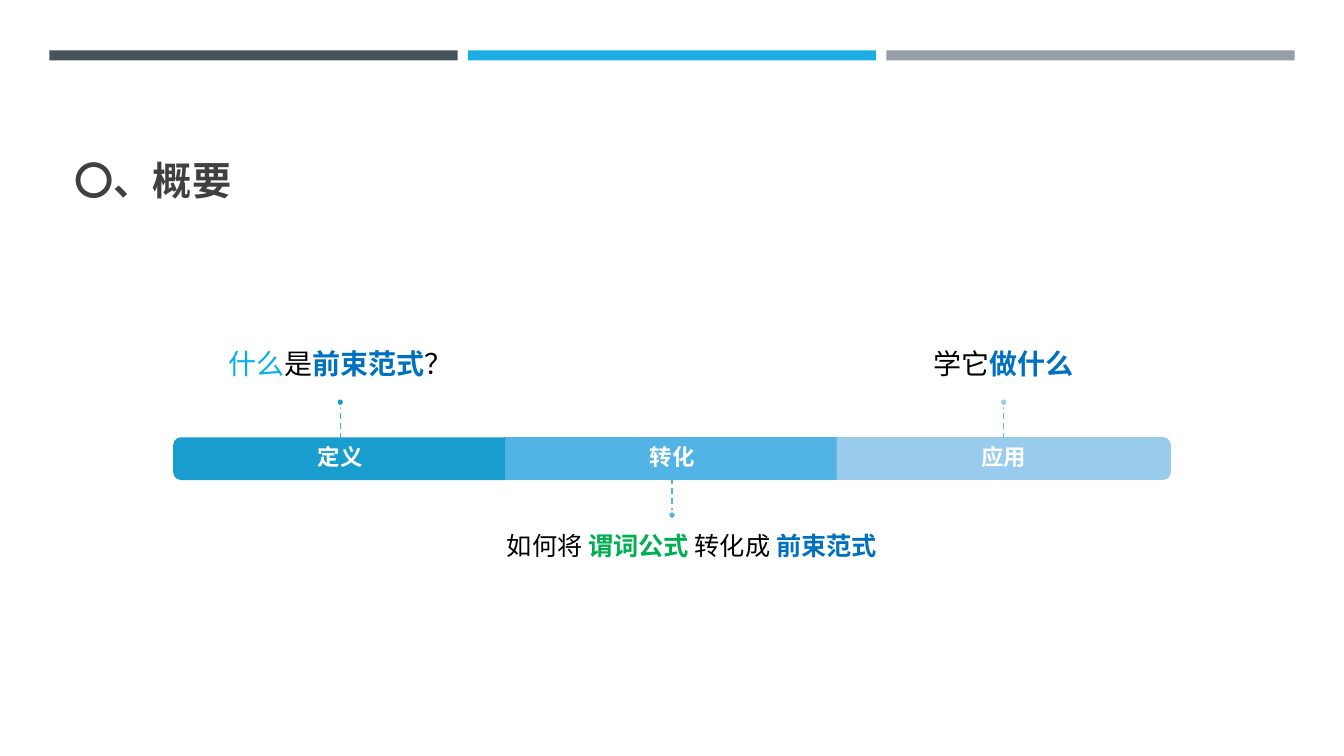
from dataclasses import dataclass

from lxml import etree
from pptx import Presentation
from pptx.dml.color import RGBColor
from pptx.enum.dml import MSO_LINE
from pptx.enum.shapes import MSO_CONNECTOR, MSO_SHAPE
from pptx.enum.text import MSO_ANCHOR, PP_ALIGN
from pptx.oxml.ns import qn
from pptx.util import Inches, Pt

RECTANGLE, OVAL = MSO_SHAPE.RECTANGLE, MSO_SHAPE.OVAL
ROUND_END = MSO_SHAPE.ROUND_2_SAME_RECTANGLE
STRAIGHT, DASH = MSO_CONNECTOR.STRAIGHT, MSO_LINE.DASH
TOP, MIDDLE, BOTTOM = MSO_ANCHOR.TOP, MSO_ANCHOR.MIDDLE, MSO_ANCHOR.BOTTOM
LEFT, CENTER = PP_ALIGN.LEFT, PP_ALIGN.CENTER

FONT = "Noto Sans CJK SC"
WHITE = RGBColor(0xFF, 0xFF, 0xFF)
BLACK = RGBColor(0x00, 0x00, 0x00)
CHARCOAL = RGBColor(0x40, 0x40, 0x40)
SLATE = RGBColor(0x46, 0x53, 0x59)
SKY = RGBColor(0x1C, 0xAD, 0xE4)
GREY = RGBColor(0x96, 0x9F, 0xA7)
CYAN = RGBColor(0x00, 0xB0, 0xF0)
BLUE = RGBColor(0x00, 0x70, 0xC0)
GREEN = RGBColor(0x00, 0xB0, 0x50)
DEEP = RGBColor(0x19, 0x9D, 0xCF)
MEDIUM = RGBColor(0x52, 0xB3, 0xE5)
PALE = RGBColor(0x99, 0xCB, 0xEC)
DEEP_LINE = RGBColor(0x36, 0xB3, 0xE9)
MEDIUM_LINE = RGBColor(0x48, 0xB8, 0xEC)
PALE_LINE = RGBColor(0x5A, 0xBE, 0xEF)


@dataclass
class Grid:
    left: float
    top: float
    column: float
    row: float

    def point(self, column, row):
        return (Inches(self.left + column * self.column),
                Inches(self.top + row * self.row))

    def box(self, column, row, columns, rows):
        return (*self.point(column, row),
                Inches(columns * self.column), Inches(rows * self.row))


PAGE = Grid(0, 0, 13.33, 7.5)
HEADER = Grid(0.49, 0.5, 4.15, 0.1)
TIMELINE = Grid(1.73, 4.35, 3.29, 0.4)
BAR_SHARE = 4.05 / 4.15
DOT_SHARE = 0.08 / 3.29


class SlideBuilder:
    def __init__(self, presentation):
        self.slide = presentation.slides.add_slide(presentation.slide_layouts[5])
        self.shapes = self.slide.shapes

    def apply(self, target, values):
        for name, value in values.items():
            setattr(target, name, value)

    def fill_text(self, shape, runs, size, anchor, align, margins, spacing):
        """Fill a shape with one paragraph of (text, colour, bold) runs."""
        frame = shape.text_frame
        sides = ("margin_left", "margin_top", "margin_right", "margin_bottom")
        self.apply(frame, {"word_wrap": True, "vertical_anchor": anchor,
                           **dict(zip(sides, map(Inches, margins)))})
        paragraph = frame.paragraphs[0]
        self.apply(paragraph, {"alignment": align, **spacing})
        for text, color, bold in runs:
            run = paragraph.add_run()
            run.text = text
            self.apply(run.font, {"name": FONT, "size": Pt(size), "bold": bold})
            run.font.color.rgb = color
            east_asian = etree.SubElement(run.font._element, qn("a:ea"))
            east_asian.set("typeface", FONT)

    def title(self, text, box):
        title = self.shapes.title
        self.apply(title, dict(zip(("left", "top", "width", "height"), box)))
        self.fill_text(title, [(text, CHARCOAL, True)], 28, BOTTOM, LEFT,
                       (0.1, 0.05, 0.1, 0.05), {"line_spacing": 0.9})

    def text(self, runs, box, size, anchor, margins):
        self.fill_text(self.shapes.add_textbox(*box), runs, size, anchor, CENTER,
                       margins, {"line_spacing": 0.9, "space_after": Pt(0.35 * size)})

    def shape(self, kind, box, fill, line=None):
        shape = self.shapes.add_shape(kind, *box)
        shape.shadow.inherit = False
        shape.fill.solid()
        shape.fill.fore_color.rgb = fill
        if line is None:
            shape.line.fill.background()
        else:
            shape.line.color.rgb = line
            shape.line.width = Pt(1.75)
        return shape

    def segment(self, column, color, rotation):
        """Draw one part of the bar; an end part is a turned, round-topped shape."""
        left, top, width, height = TIMELINE.box(column, 0, 1, 1)
        if not rotation:
            return self.shape(RECTANGLE, (left, top, width, height), color, color)
        shift = (width - height) // 2
        end = self.shape(ROUND_END, (left + shift, top - shift, height, width),
                         color, color)
        end.rotation = rotation
        return end

    def dashed_line(self, start, end, color):
        connector = self.shapes.add_connector(STRAIGHT, *start, *end)
        connector.line.color.rgb = color
        self.apply(connector.line, {"width": Pt(1), "dash_style": DASH})
        etree.SubElement(connector._element.spPr, qn("a:effectLst"))
        return connector


def main():
    presentation = Presentation()
    presentation.slide_width = Inches(13.33)
    presentation.slide_height = Inches(7.5)
    builder = SlideBuilder(presentation)

    # Header bars and title
    for column, color in enumerate((SLATE, SKY, GREY)):
        builder.shape(RECTANGLE, HEADER.box(column, 0, BAR_SHARE, 1), color)
    builder.title("〇、概要", PAGE.box(0.048, 0.103, 0.905, 0.173))

    # Timeline: label, colour, line colour, rotation, above, shift, size, caption
    steps = [
        ("定义", DEEP, DEEP_LINE, 270, True, 0, 20,
         [("什么", CYAN, False), ("是", BLACK, False),
          ("前束范式", BLUE, True), ("？", BLACK, False)]),
        ("转化", MEDIUM, MEDIUM_LINE, 0, False, 0.06, 18,
         [("如何将 ", BLACK, False), ("谓词公式 ", GREEN, True),
          ("转化成 ", BLACK, False), ("前束范式", BLUE, True)]),
        ("应用", PALE, PALE_LINE, 90, True, 0, 20,
         [("学它", BLACK, False), ("做什么", BLUE, True)]),
    ]
    for column, step in enumerate(steps):
        label, color, line_color, rotation, above, shift, size, caption = step
        middle = column + 0.5
        segment = builder.segment(column, color, rotation)
        builder.text([(label, WHITE, True)], TIMELINE.box(column, 0, 1, 1),
                     16, MIDDLE, (0.13, 0.13, 0.13, 0.13))

        # Caption above or below the bar
        caption_row, anchor, margins = (
            (-4.5, BOTTOM, (0, 0, 0, 0.17)) if above else (2, TOP, (0, 0.15, 0, 0)))
        builder.text(caption, TIMELINE.box(middle - 0.83 + shift, caption_row, 1.66, 3.5),
                     size, anchor, margins)

        # Dashed line with its dot
        bar_row, line_row, dot_row = (0, -0.8, -1) if above else (1, 1.8, 1.8)
        connector = builder.dashed_line(TIMELINE.point(middle, bar_row),
                                        TIMELINE.point(middle, line_row), line_color)
        if not rotation:
            connector.begin_connect(segment, 2)
        builder.shape(OVAL, TIMELINE.box(middle - DOT_SHARE / 2, dot_row, DOT_SHARE, 0.2),
                      color, WHITE)

    presentation.save("out.pptx")


if __name__ == "__main__":
    main()
